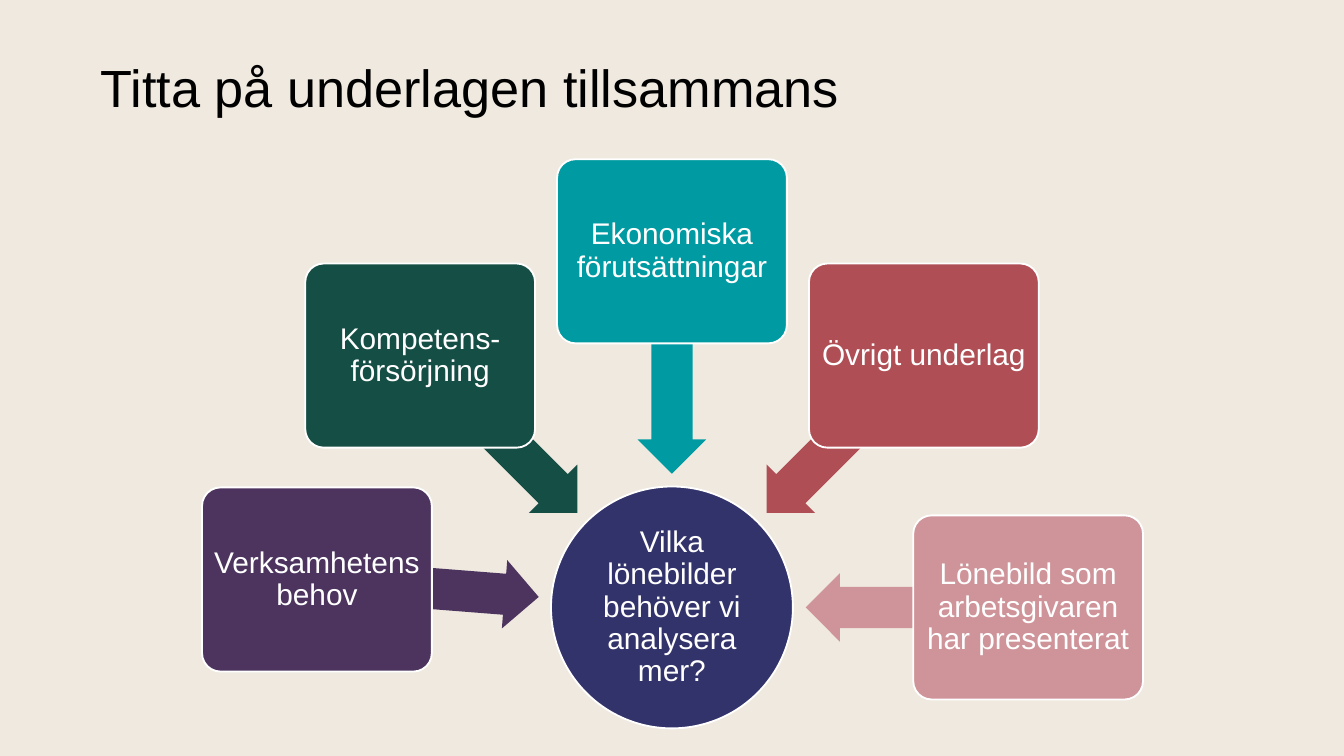
"""Build a slide where five kinds of input point to one central question."""
from math import cos, radians, sin

from pptx import Presentation
from pptx.dml.color import RGBColor
from pptx.enum.shapes import MSO_SHAPE as Kind
from pptx.enum.text import MSO_ANCHOR as Anchor, PP_ALIGN as Align
from pptx.util import Inches, Pt

SAND = RGBColor(0xEF, 0xE9, 0xDF)
BLACK = RGBColor(0, 0, 0)
WHITE = RGBColor(0xFF, 0xFF, 0xFF)
NAVY = RGBColor(0x33, 0x33, 0x6B)
PLUM = RGBColor(0x4D, 0x34, 0x5F)
PINE = RGBColor(0x15, 0x4E, 0x45)
TEAL = RGBColor(0x00, 0x9B, 0xA2)
RED = RGBColor(0xAF, 0x4E, 0x55)
ROSE = RGBColor(0xCF, 0x94, 0x99)

TITLE = "Titta på underlagen tillsammans"
HUB = "Vilka lönebilder behöver vi analysera mer?"
CARDS = [
    ("Verksamhetens behov", PLUM, 184.5),
    ("Kompetens-försörjning", PINE, 225),
    ("Ekonomiska förutsättningar", TEAL, 270),
    ("Övrigt underlag", RED, 315),
    ("Lönebild som arbetsgivaren har presenterat", ROSE, 0),
]

WIDE = 10
HIGH = WIDE * 9 / 16
MID = (WIDE / 2, 4.52)
HUB_SIZE = (1.8, 1.8)
CARD_SIZE = (1.71, 1.37)
ARROW_SIZE = (1.65, 0.51)
CARD_REACH, ARROW_REACH = 2.65, 1.82


def spot(angle, reach):
    turn = radians(angle)
    return MID[0] + reach * cos(turn), MID[1] + reach * sin(turn)


def write(shape, text, size, color, align, inset):
    frame = shape.text_frame
    frame.word_wrap = True
    frame.vertical_anchor = Anchor.MIDDLE
    frame.margin_left = frame.margin_right = Inches(inset)
    frame.margin_top = frame.margin_bottom = Inches(inset)
    para = frame.paragraphs[0]
    para.alignment = align
    para.line_spacing = 0.9
    run = para.add_run()
    run.text = text
    run.font.name = "Arial"
    run.font.size = Pt(size)
    run.font.color.rgb = color


def draw(slide, kind, mid, size, fill):
    left, top = (m - s / 2 for m, s in zip(mid, size))
    shape = slide.shapes.add_shape(kind, *map(Inches, (left, top, *size)))
    shape.shadow.inherit = False
    shape.fill.solid()
    shape.fill.fore_color.rgb = fill
    shape.line.fill.background()
    return shape


def label(shape, text, inset):
    shape.line.color.rgb = WHITE
    shape.line.width = Pt(1)
    write(shape, text, 16, WHITE, Align.CENTER, inset)


def main():
    deck = Presentation()
    deck.slide_width, deck.slide_height = Inches(WIDE), Inches(HIGH)
    slide = deck.slides.add_slide(deck.slide_layouts[6])
    slide.background.fill.solid()
    slide.background.fill.fore_color.rgb = SAND

    title = slide.shapes.add_textbox(*map(Inches, (0.75, 0.13, 8.2, 1.09)))
    write(title, TITLE, 28, BLACK, Align.LEFT, 0)

    label(draw(slide, Kind.OVAL, MID, HUB_SIZE, NAVY), HUB, 0.02)
    for text, color, angle in CARDS:
        arrow = draw(slide, Kind.LEFT_ARROW, spot(angle, ARROW_REACH), ARROW_SIZE, color)
        arrow.adjustments[0], arrow.adjustments[1] = 0.6, 0.5
        arrow.rotation = angle
        card = draw(slide, Kind.ROUNDED_RECTANGLE, spot(angle, CARD_REACH), CARD_SIZE, color)
        card.adjustments[0] = 0.1
        label(card, text, 0.03)
    deck.save("out.pptx")


if __name__ == "__main__":
    main()
